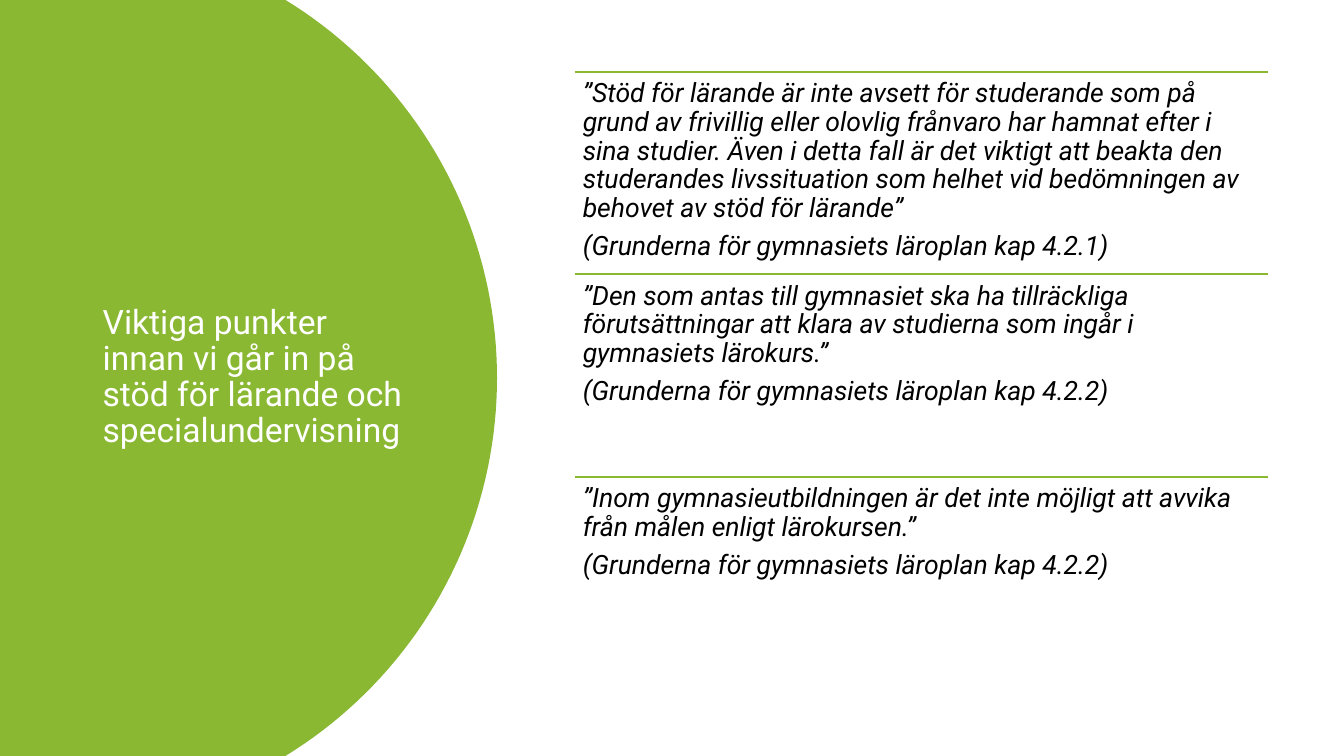
"""Build a slide with a title on a green arc and three ruled quotations."""
import math

import pptx
import pptx.dml.color
import pptx.enum.shapes
import pptx.enum.text
import pptx.oxml.ns
import pptx.util
from lxml import etree

Inches = pptx.util.Inches
Pt = pptx.util.Pt
RGBColor = pptx.dml.color.RGBColor
Anchor = pptx.enum.text.MSO_ANCHOR

TITLE = "Viktiga punkter innan vi går in på stöd för lärande och specialundervisning"
QUOTES = [
    ("”Stöd för lärande är inte avsett för studerande som på grund av frivillig "
     "eller olovlig frånvaro har hamnat efter i sina studier. Även i detta fall är "
     "det viktigt att beakta den studerandes livssituation som helhet vid "
     "bedömningen av behovet av stöd för lärande”",
     "(Grunderna för gymnasiets läroplan kap 4.2.1)"),
    ("”Den som antas till gymnasiet ska ha tillräckliga förutsättningar att klara "
     "av studierna som ingår i gymnasiets lärokurs.”",
     "(Grunderna för gymnasiets läroplan kap 4.2.2)"),
    ("”Inom gymnasieutbildningen är det inte möjligt att avvika från målen enligt "
     "lärokursen.”",
     "(Grunderna för gymnasiets läroplan kap 4.2.2)"),
]

GREEN = RGBColor(0x8A, 0xB8, 0x33)
WHITE = RGBColor(0xFF, 0xFF, 0xFF)
BLACK = RGBColor(0x00, 0x00, 0x00)

PAGE_WIDTH, PAGE_HEIGHT = 13.33, 7.5
ARC_RIGHT, ARC_RADIUS, ARC_STEPS = 4.93, 4.4, 80
QUOTE_LEFT, QUOTE_TOP, QUOTE_WIDTH, QUOTE_HEIGHT = 5.7, 0.71, 6.88, 2.01

TITLE_FONT = {"name": "Roboto", "size": Pt(24)}
QUOTE_FONT = {"name": "Roboto", "size": Pt(19), "italic": True}
TITLE_FRAME = {"word_wrap": True, "vertical_anchor": Anchor.MIDDLE}
QUOTE_FRAME = {"word_wrap": True, "vertical_anchor": Anchor.TOP}
QUOTE_FRAME.update({f"margin_{side}": Inches(0.08)
                    for side in ("left", "top", "right", "bottom")})
TITLE_PARA = {"line_spacing": 0.9}
QUOTE_PARA = {"line_spacing": 0.9, "space_after": Pt(6.65)}


def apply(target, values):
    for name, value in values.items():
        setattr(target, name, value)


def add_text(page, bounds, texts, frame_format, para_format, font_format, color):
    frame = page.shapes.add_textbox(*map(Inches, bounds)).text_frame
    apply(frame, frame_format)
    for index, text in enumerate(texts):
        para = frame.add_paragraph() if index else frame.paragraphs[0]
        apply(para, para_format)
        span = para.add_run()
        span.text = text
        apply(span.font, font_format)
        span.font.color.rgb = color


def add_arc_panel(page):
    middle = PAGE_HEIGHT / 2
    center = ARC_RIGHT - ARC_RADIUS
    reach = math.asin(middle / ARC_RADIUS)
    angles = [reach * (2 * step / ARC_STEPS - 1) for step in range(ARC_STEPS + 1)]
    curve = [(Inches(center + ARC_RADIUS * math.cos(angle)),
              Inches(middle + ARC_RADIUS * math.sin(angle))) for angle in angles]
    builder = page.shapes.build_freeform(0, 0)
    builder.add_line_segments(curve + [(0, Inches(PAGE_HEIGHT))], close=True)
    panel = builder.convert_to_shape()
    panel.shadow.inherit = False
    panel.fill.solid()
    panel.fill.fore_color.rgb = GREEN
    panel.line.fill.background()


def add_rule(page, top):
    ends = (QUOTE_LEFT, top, QUOTE_LEFT + QUOTE_WIDTH, top)
    rule = page.shapes.add_connector(
        pptx.enum.shapes.MSO_CONNECTOR.STRAIGHT, *map(Inches, ends))
    rule.line.color.rgb = GREEN
    rule.line.width = Pt(1.5)
    etree.SubElement(rule._element.spPr, pptx.oxml.ns.qn("a:effectLst"))


def main():
    deck = pptx.Presentation()
    deck.slide_width, deck.slide_height = Inches(PAGE_WIDTH), Inches(PAGE_HEIGHT)
    page = deck.slides.add_slide(deck.slide_layouts[6])
    add_arc_panel(page)
    add_text(page, (0.92, 0.7, 3.23, 6.09), [TITLE],
             TITLE_FRAME, TITLE_PARA, TITLE_FONT, WHITE)
    for index, texts in enumerate(QUOTES):
        top = QUOTE_TOP + index * QUOTE_HEIGHT
        add_rule(page, top)
        add_text(page, (QUOTE_LEFT, top, QUOTE_WIDTH, QUOTE_HEIGHT), texts,
                 QUOTE_FRAME, QUOTE_PARA, QUOTE_FONT, BLACK)
    deck.save("out.pptx")


if __name__ == "__main__":
    main()
